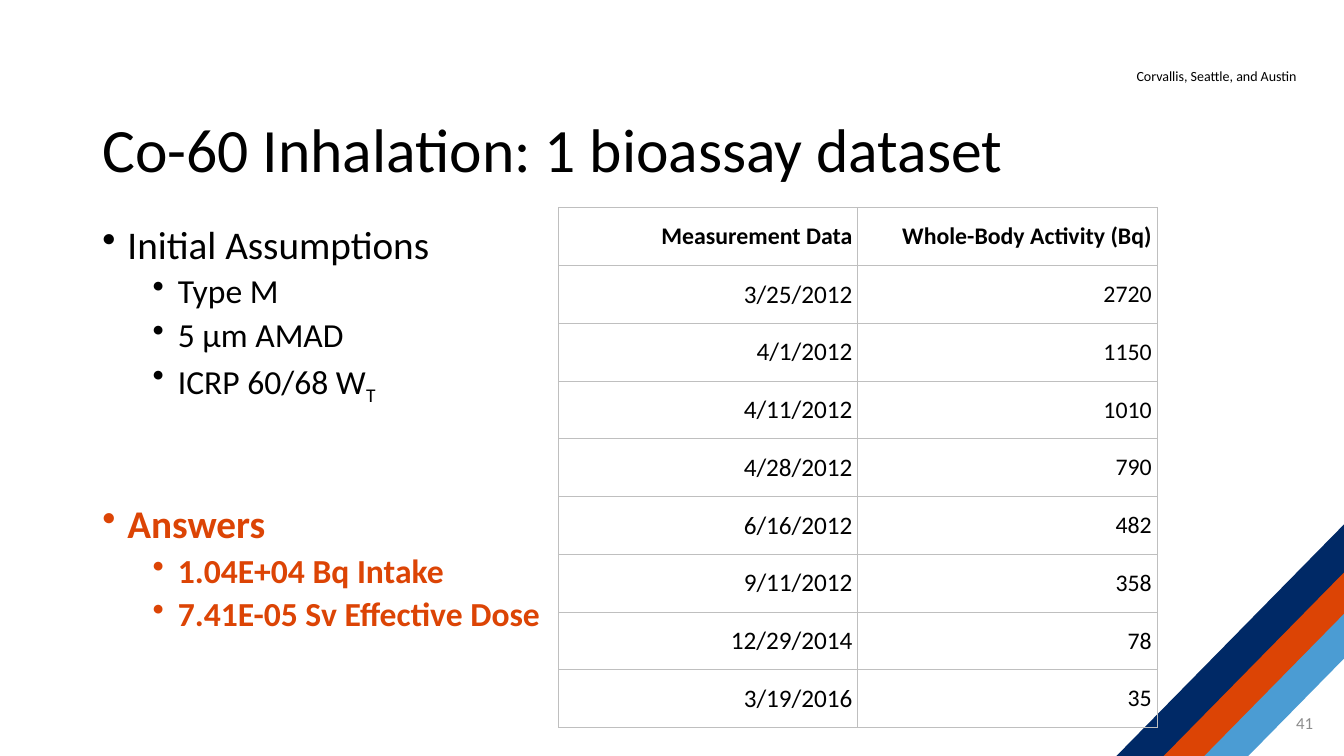
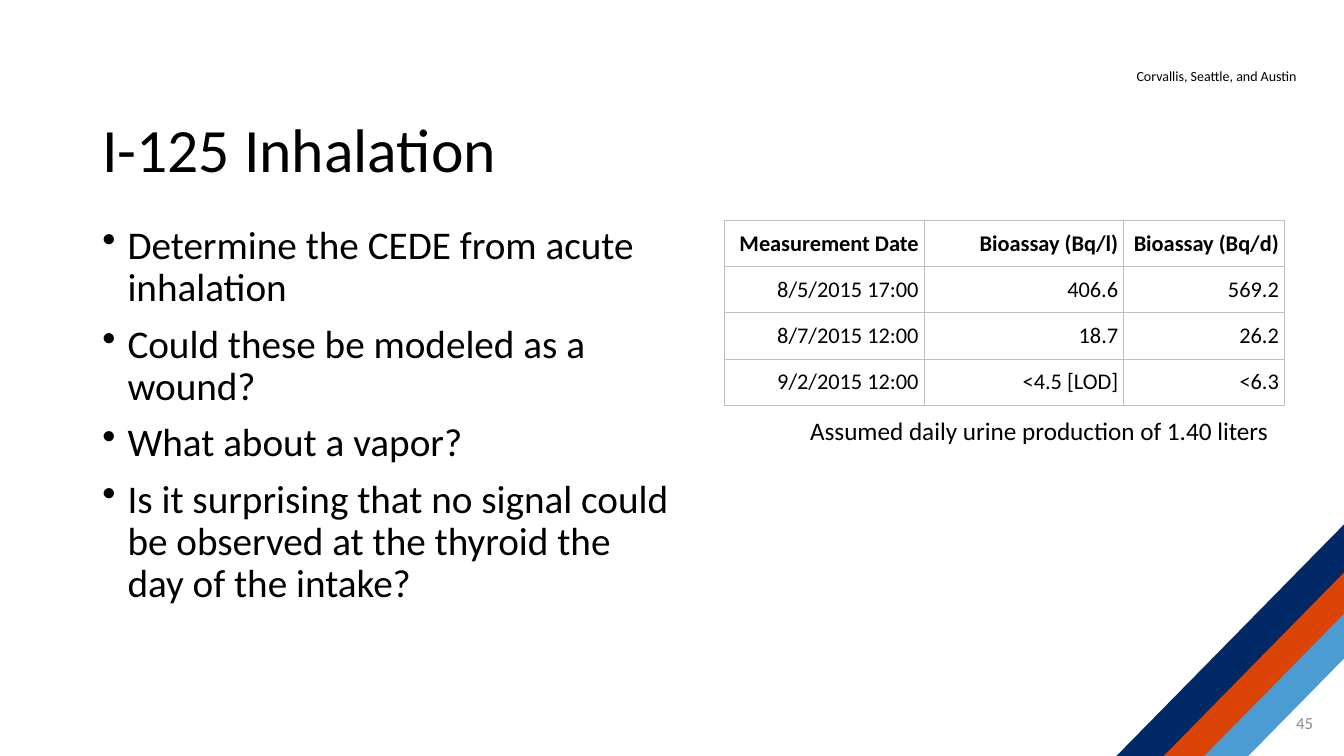
from dataclasses import dataclass

from lxml.etree import SubElement
from pptx import Presentation
from pptx.dml.color import RGBColor
from pptx.enum.shapes import MSO_SHAPE as Shape
from pptx.enum.text import MSO_ANCHOR as Anchor, PP_ALIGN as Align
from pptx.oxml import parse_xml
from pptx.oxml.ns import nsdecls, qn
from pptx.util import Emu, Pt

EMU_PER_PX = 9525
SLIDE_WIDTH, SLIDE_HEIGHT = 1280, 720
FONT = "Calibri"
BLACK = RGBColor(0x00, 0x00, 0x00)
GRAY = RGBColor(0x8C, 0x8C, 0x8C)
NAVY = RGBColor(0x00, 0x29, 0x66)
ORANGE = RGBColor(0xDC, 0x44, 0x05)
SKY = RGBColor(0x4B, 0x9C, 0xD3)
GRID = RGBColor(0xBF, 0xBF, 0xBF)
BAND_ANGLE = 314.5
BAND_THICKNESS = 32
GRID_WIDTH = Pt(0.75)
CELL_MARGIN = 5


@dataclass(frozen=True)
class Box:
    left: int
    top: int
    width: int
    height: int

    def emu(self) -> tuple:
        return tuple(px(v) for v in (self.left, self.top, self.width, self.height))


@dataclass(frozen=True)
class Band:
    left: int
    top: int
    length: int
    color: RGBColor


@dataclass(frozen=True)
class Bullet:
    text: str
    level: int = 0
    subscript: str = ""
    answer: bool = False
    space_before: int = 0


@dataclass(frozen=True)
class DataTable:
    left: int
    top: int
    column_widths: tuple
    row_height: int
    header_size: int
    column_sizes: tuple
    rows: tuple


@dataclass(frozen=True)
class Exercise:
    title: str
    number: int
    body_width: int
    bullets: tuple
    data: DataTable
    caption: str = ""


BANDS = (
    Band(1119, 648, 205, SKY),
    Band(1068, 622, 274, ORANGE),
    Band(1022, 605, 322, NAVY),
)
LOCATIONS_BOX = Box(1073, 60, 175, 26)
TITLE_BOX = Box(88, 92, 1104, 106)
NUMBER_BOX = Box(972, 669, 288, 38)
CAPTION_BOX = Box(762, 391, 461, 38)
BODY_LEFT, BODY_TOP, BODY_HEIGHT = 88, 210, 439

EXERCISES = (
    Exercise(
        "Co-60 Inhalation: 1 bioassay dataset", 41, 481,
        (
            Bullet("Initial Assumptions"),
            Bullet("Type M", 1),
            Bullet("5 µm AMAD", 1),
            Bullet("ICRP 60/68 W", 1, subscript="T"),
            Bullet("Answers", answer=True, space_before=73),
            Bullet("1.04E+04 Bq Intake", 1, answer=True),
            Bullet("7.41E-05 Sv Effective Dose", 1, answer=True),
        ),
        DataTable(
            532, 198, (285, 285), 55, 17, (18, 17),
            (
                ("Measurement Data", "Whole-Body Activity (Bq)"),
                ("3/25/2012", "2720"),
                ("4/1/2012", "1150"),
                ("4/11/2012", "1010"),
                ("4/28/2012", "790"),
                ("6/16/2012", "482"),
                ("9/11/2012", "358"),
                ("12/29/2014", "78"),
                ("3/19/2016", "35"),
            ),
        ),
    ),
    Exercise(
        "I-125 Inhalation", 45, 564,
        (
            Bullet("Determine the CEDE from acute inhalation"),
            Bullet("Could these be modeled as a wound?"),
            Bullet("What about a vapor?"),
            Bullet("Is it surprising that no signal could be observed "
                   "at the thyroid the day of the intake?"),
        ),
        DataTable(
            690, 210, (190, 190, 153), 44, 16, (16, 16, 16),
            (
                ("Measurement Date", "Bioassay (Bq/l)", "Bioassay (Bq/d)"),
                ("8/5/2015 17:00", "406.6", "569.2"),
                ("8/7/2015 12:00", "18.7", "26.2"),
                ("9/2/2015 12:00", "<4.5 [LOD]", "<6.3"),
            ),
        ),
        "Assumed daily urine production of 1.40 liters",
    ),
)


def px(value: int) -> Emu:
    return Emu(value * EMU_PER_PX)


def style(paragraph, size: int, color: RGBColor = BLACK, bold: bool = False) -> None:
    font = paragraph.font
    font.name, font.size, font.bold = FONT, Pt(size), bold
    font.color.rgb = color


def add_frame(slide, box: Box, wrap: bool = True, anchor=Anchor.TOP):
    frame = slide.shapes.add_textbox(*box.emu()).text_frame
    frame.word_wrap = wrap
    frame.vertical_anchor = anchor
    return frame


def add_line(slide, box: Box, text: str, size: int, color: RGBColor = BLACK,
             wrap: bool = True, anchor=Anchor.TOP, align=Align.LEFT) -> None:
    paragraph = add_frame(slide, box, wrap, anchor).paragraphs[0]
    paragraph.text = text
    paragraph.alignment = align
    paragraph.line_spacing = 0.9 if box == TITLE_BOX else 1.0
    style(paragraph, size, color)


def add_band(slide, band: Band) -> None:
    box = Box(band.left, band.top, band.length, BAND_THICKNESS)
    stripe = slide.shapes.add_shape(Shape.RECTANGLE, *box.emu())
    stripe.rotation = BAND_ANGLE
    stripe.shadow.inherit = False
    stripe.fill.solid()
    stripe.fill.fore_color.rgb = band.color
    stripe.line.fill.background()


def add_bullets(slide, width: int, bullets: tuple) -> None:
    frame = add_frame(slide, Box(BODY_LEFT, BODY_TOP, width, BODY_HEIGHT))
    for index, bullet in enumerate(bullets):
        paragraph = frame.add_paragraph() if index else frame.paragraphs[0]
        paragraph.level = bullet.level
        paragraph.line_spacing = 0.9
        gap = bullet.space_before or (5 if bullet.level else 10)
        paragraph.space_before = Pt(gap if index else 0)
        paragraph.add_run().text = bullet.text
        if bullet.subscript:
            lowered = paragraph.add_run()
            lowered.text = bullet.subscript
            lowered.font._element.set("baseline", "-25000")
        properties = paragraph._p.get_or_add_pPr()
        properties.set("marL", str(px(24 + 48 * bullet.level)))
        properties.set("indent", str(px(-24)))
        SubElement(properties, qn("a:buChar")).set("char", "•")
        style(paragraph, 24 if bullet.level else 28,
              ORANGE if bullet.answer else BLACK, bullet.answer)


def add_borders(cell) -> None:
    properties = cell._tc.get_or_add_tcPr()
    for position, side in enumerate(("lnL", "lnR", "lnT", "lnB")):
        properties.insert(position, parse_xml(
            f'<a:{side} {nsdecls("a")} w="{GRID_WIDTH}"><a:solidFill>'
            f'<a:srgbClr val="{GRID}"/></a:solidFill></a:{side}>'))


def add_data(slide, data: DataTable) -> None:
    box = Box(data.left, data.top, sum(data.column_widths),
              data.row_height * len(data.rows))
    table = slide.shapes.add_table(
        len(data.rows), len(data.column_widths), *box.emu()).table
    table.horz_banding = False
    for column, width in zip(table.columns, data.column_widths):
        column.width = px(width)
    for row_index, values in enumerate(data.rows):
        table.rows[row_index].height = px(data.row_height)
        header = row_index == 0
        for column_index, value in enumerate(values):
            cell = table.cell(row_index, column_index)
            cell.fill.background()
            cell.vertical_anchor = Anchor.MIDDLE
            cell.margin_left = cell.margin_right = px(CELL_MARGIN)
            cell.margin_top = cell.margin_bottom = 0
            add_borders(cell)
            paragraph = cell.text_frame.paragraphs[0]
            paragraph.text = value
            paragraph.alignment = Align.RIGHT
            size = data.header_size if header else data.column_sizes[column_index]
            style(paragraph, size, bold=header)


def add_exercise(deck, exercise: Exercise) -> None:
    slide = deck.slides.add_slide(deck.slide_layouts[6])
    add_line(slide, LOCATIONS_BOX, "Corvallis, Seattle, and Austin", 10, wrap=False)
    for band in BANDS:
        add_band(slide, band)
    add_line(slide, TITLE_BOX, exercise.title, 44, anchor=Anchor.MIDDLE)
    add_line(slide, NUMBER_BOX, str(exercise.number), 12, GRAY,
             anchor=Anchor.MIDDLE, align=Align.RIGHT)
    add_bullets(slide, exercise.body_width, exercise.bullets)
    add_data(slide, exercise.data)
    if exercise.caption:
        add_line(slide, CAPTION_BOX, exercise.caption, 18, wrap=False)


def main() -> None:
    deck = Presentation()
    deck.slide_width, deck.slide_height = px(SLIDE_WIDTH), px(SLIDE_HEIGHT)
    for exercise in EXERCISES:
        add_exercise(deck, exercise)
    deck.save("out.pptx")


if __name__ == "__main__":
    main()
